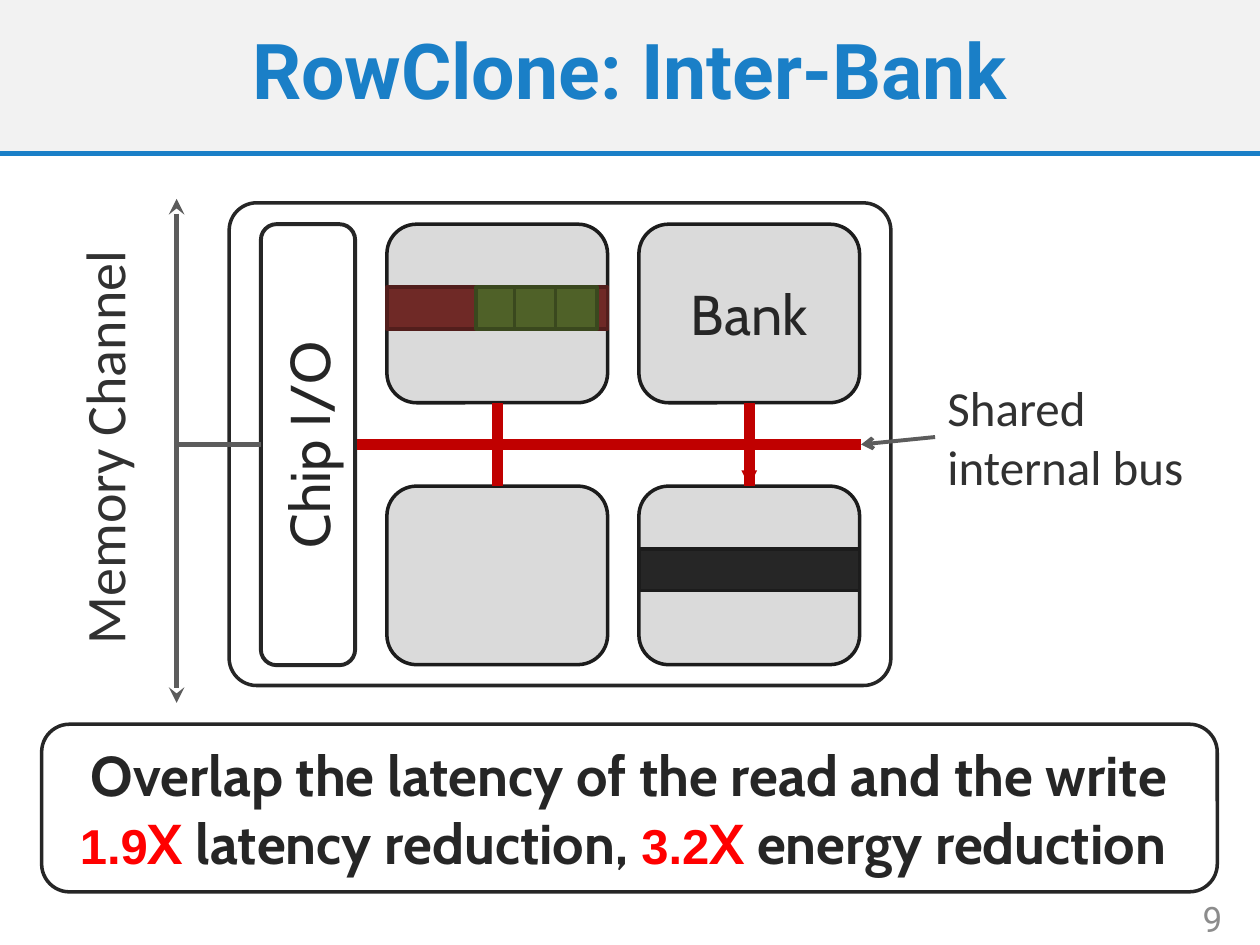
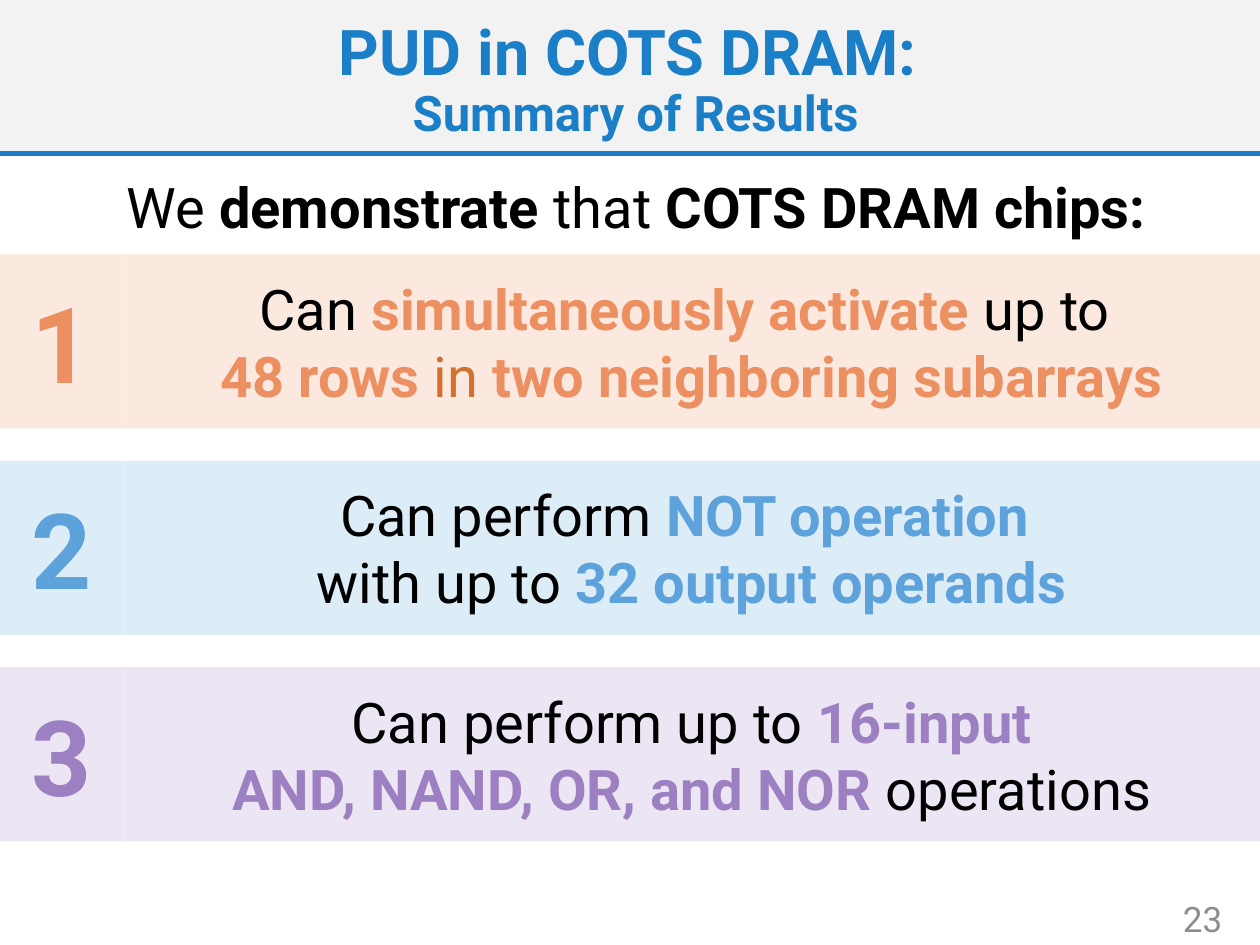
from lxml.etree import SubElement
from pptx import Presentation
from pptx.dml.color import RGBColor
from pptx.enum.shapes import MSO_CONNECTOR, MSO_SHAPE
from pptx.enum.text import MSO_ANCHOR, PP_ALIGN
from pptx.oxml.ns import qn
from pptx.util import Cm, Pt

WIDTH, HEIGHT = 25.4, 19.05
BLUE, PALE_GREY, NUMBER_GREY = "1A7FC7", "F2F2F2", "8C8C8C"
INK, OUTLINE, LABEL, WIRE = "262626", "1C1C1C", "313131", "5C5C5C"
BANK_FILL, BUS_RED, BRIGHT_RED = "DADADA", "C00000", "FF0000"
ORANGE, DARK_ORANGE, SKY, PURPLE = "EC8F61", "D56F30", "5DA2DB", "9C80C2"
BANK_WIDTH, BANK_HEIGHT, ROW_HEIGHT = 4.45, 3.6, 0.84


def color(value):
    """Turn a hex string into a colour."""
    return RGBColor.from_string(value)


def style_font(font, size=None, name=None, ink=None, bold=None):
    """Set the given properties of a font."""
    if size:
        font.size = Pt(size)
    if name:
        font.name = name
    if ink:
        font.color.rgb = color(ink)
    if bold is not None:
        font.bold = bold


def write(shape, paragraphs, size, name="Roboto", ink="000000", bold=False,
          align=PP_ALIGN.CENTER, anchor=MSO_ANCHOR.MIDDLE, spacing=None, wrap=True):
    """Fill a shape with paragraphs, each a list of (text, font changes)."""
    frame = shape.text_frame
    frame.word_wrap = wrap
    frame.vertical_anchor = anchor
    for index, pieces in enumerate(paragraphs):
        paragraph = frame.paragraphs[0] if index == 0 else frame.add_paragraph()
        paragraph.alignment = align
        if spacing:
            paragraph.line_spacing = spacing
        style_font(paragraph.font, size, name, ink, bold)
        for text, changes in pieces:
            run = paragraph.add_run()
            run.text = text
            style_font(run.font, **changes)


def plain(text):
    """Make one paragraph without font changes."""
    return [(text, {})]


def add_text(slide, box, paragraphs, size, **options):
    """Add a text box at a box given in centimetres."""
    shape = slide.shapes.add_textbox(*map(Cm, box))
    write(shape, paragraphs, size, **options)
    return shape


def add_box(slide, kind, box, fill, line=None, line_width=2, radius=None):
    """Add a filled preset shape at a box given in centimetres."""
    shape = slide.shapes.add_shape(kind, *map(Cm, box))
    shape.shadow.inherit = False
    shape.fill.solid()
    shape.fill.fore_color.rgb = color(fill)
    if line:
        shape.line.color.rgb = color(line)
        shape.line.width = Pt(line_width)
    else:
        shape.line.fill.background()
    if radius:
        shape.adjustments[0] = radius
    return shape


def add_line(slide, start, end, ink, width, head=None, tail=None,
             kind=MSO_CONNECTOR.STRAIGHT):
    """Add a connector between two points, with optional arrowheads."""
    connector = slide.shapes.add_connector(kind, *map(Cm, (*start, *end)))
    connector.line.color.rgb = color(ink)
    connector.line.width = Pt(width)
    properties = connector._element.spPr
    outline = properties.find(qn("a:ln"))
    for tag, arrow in (("a:headEnd", head), ("a:tailEnd", tail)):
        if arrow:
            SubElement(outline, qn(tag)).set("type", arrow)
    SubElement(properties, qn("a:effectLst"))
    return connector


def add_frame(presentation, number):
    """Add a slide with the title band, its rule and the page number."""
    slide = presentation.slides.add_slide(presentation.slide_layouts[6])
    add_box(slide, MSO_SHAPE.RECTANGLE, (0, -0.03, WIDTH, 3.15), PALE_GREY)
    add_text(slide, (22.15, 18.01, 2.74, 1.02), [plain(str(number))], 20,
             ink=NUMBER_GREY, align=PP_ALIGN.RIGHT)
    add_line(slide, (0, 3.1), (WIDTH, 3.1), BLUE, 3)
    return slide


def add_title(slide, box, paragraphs, size):
    """Add the bold blue title."""
    add_text(slide, box, paragraphs, size, ink=BLUE, bold=True, spacing=0.9)


def add_memory_channel(slide, left, top, height, label_width):
    """Draw the vertical channel arrow and the rotated label beside it."""
    add_line(slide, (left, top), (left, top + height), WIRE, 3, "stealth", "stealth")
    label_height = 1.63
    center_x, center_y = left - 1.47, top + height / 2 - 0.07
    label = add_text(slide, (center_x - label_width / 2, center_y - label_height / 2,
                             label_width, label_height),
                     [plain("Memory Channel")], 32, name="Calibri", ink=LABEL,
                     anchor=MSO_ANCHOR.TOP, wrap=False)
    label.rotation = 270


def add_bank(slide, left, top):
    """Draw one memory bank."""
    return add_box(slide, MSO_SHAPE.ROUNDED_RECTANGLE,
                   (left, top, BANK_WIDTH, BANK_HEIGHT), BANK_FILL, OUTLINE)


def add_row(slide, left, top, fill, line, width=BANK_WIDTH):
    """Draw a row, or a cell of one, inside a bank."""
    add_box(slide, MSO_SHAPE.RECTANGLE, (left, top + 1.27, width, ROW_HEIGHT), fill, line)


def add_copy_path(slide, start, end):
    """Draw the elbow arrow that leaves downwards and arrives downwards."""
    center_x, center_y = (start[0] + end[0]) / 2, (start[1] + end[1]) / 2
    across, down = (end[0] - start[0]) / 2, (end[1] - start[1]) / 2
    elbow = add_line(slide, (center_x + down, center_y - across),
                     (center_x - down, center_y + across), BUS_RED, 3,
                     tail="triangle", kind=MSO_CONNECTOR.ELBOW)
    elbow._element.spPr.xfrm.set("rot", str(270 * 60000))


def add_chip(slide, left, top, width, height, channel_x):
    """Draw the chip with its interface, banks, internal bus and copied row."""
    add_box(slide, MSO_SHAPE.ROUNDED_RECTANGLE, (left, top, width, height),
            "FFFFFF", INK, radius=0.057)
    interface_left, interface_width = left + 0.64, 1.9
    interface = add_box(slide, MSO_SHAPE.ROUNDED_RECTANGLE,
                        (interface_left, top + 0.43, interface_width, 8.89),
                        "FFFFFF", INK, 2.25)
    write(interface, [plain("Chip I/O")], 32, name="Cabin", ink=INK)
    interface.text_frame._txBody.bodyPr.set("vert", "vert270")

    columns = [left + 3.18 + 5.08 * index for index in range(2)]
    rows = [top + 0.43 + 5.28 * index for index in range(2)]
    banks = [[add_bank(slide, x, y) for x in columns] for y in rows]
    write(banks[0][1], [plain("Bank")], 32, name="Cabin", ink=INK)

    gap_top, gap_bottom = rows[0] + BANK_HEIGHT, rows[1]
    bus_y = (gap_top + gap_bottom) / 2
    bus_left, bus_right = interface_left + interface_width + 0.03, columns[1] + BANK_WIDTH + 0.03
    add_line(slide, (interface_left, bus_y), (channel_x, bus_y), WIRE, 3)
    add_line(slide, (bus_right, bus_y), (bus_left, bus_y), BUS_RED, 6)
    middles = [x + BANK_WIDTH / 2 for x in columns]
    for middle in middles:
        add_line(slide, (middle, gap_top), (middle, gap_bottom), BUS_RED, 6)
    add_copy_path(slide, (middles[0], gap_top), (middles[1], gap_bottom))

    add_row(slide, columns[0], rows[0], "6F2926", "521E1C")
    add_row(slide, columns[1], rows[1], INK, OUTLINE)
    for offset in (1.8, 2.57, 3.4):
        add_row(slide, columns[0] + offset, rows[0], "4F6128", "3A481E", ROW_HEIGHT)
    return bus_right, bus_y


def add_bus_label(slide, left, top, bus_end):
    """Name the internal bus and point to its end."""
    add_text(slide, (left, top, 5.72, 2.64), [plain("Shared internal bus")], 28,
             name="Calibri", ink=LABEL, align=PP_ALIGN.LEFT, anchor=MSO_ANCHOR.TOP)
    add_line(slide, (left, top + 1.32), bus_end, WIRE, 2.25, tail="arrow")


def add_conclusion(slide, box):
    """Add the outlined box with the measured gains."""
    figure = {"size": 28, "name": "Arial", "ink": BRIGHT_RED}
    times = {"ink": BRIGHT_RED}
    shape = add_box(slide, MSO_SHAPE.ROUNDED_RECTANGLE, box, "FFFFFF", INK)
    write(shape, [
        plain("Overlap the latency of the read and the write"),
        [("1.9", figure), ("X", times), (" latency reduction, ", {}),
         ("3.2", figure), ("X", times), (" energy reduction ", {})],
    ], 32, name="Cabin", ink=INK, bold=True)


def add_result(slide, top, number, fill, accent, paragraphs):
    """Add a full-width band with a large number and its finding."""
    number_width, height = 2.49, 3.51
    finding = add_box(slide, MSO_SHAPE.RECTANGLE,
                      (number_width, top, WIDTH - number_width, height), fill)
    write(finding, paragraphs, 32)
    badge = add_box(slide, MSO_SHAPE.RECTANGLE, (0, top, number_width, height), fill)
    write(badge, [plain(str(number))], 60, ink=accent, bold=True)


def build_inter_bank(presentation):
    """Build the slide on copying between banks."""
    slide = add_frame(presentation, 9)
    add_title(slide, (0, -0.03, WIDTH, 3.07), [plain("RowClone: Inter-Bank")], 44)
    channel_x = 3.56
    add_memory_channel(slide, channel_x, 4.01, 10.16, 8.53)
    bus_end = add_chip(slide, 4.62, 4.09, 13.34, 9.73, channel_x)
    add_bus_label(slide, 18.85, 7.49, bus_end)
    add_conclusion(slide, (0.84, 14.6, 23.7, 3.38))


def build_results(presentation):
    """Build the slide that sums up the results."""
    slide = add_frame(presentation, 23)
    strong = {"bold": True}
    orange, sky, purple = ({"ink": ink, "bold": True} for ink in (ORANGE, SKY, PURPLE))
    add_text(slide, (0.13, 2.95, WIDTH, 2.59), [[
        ("We ", {}), ("demonstrate ", strong), ("that", {}), (" COTS DRAM chips:", strong),
    ]], 32, spacing=0.9)
    results = [
        ("FBE9DF", ORANGE, [
            [("Can ", {}), ("simultaneously activate ", orange), ("up to ", {})],
            [("48 rows ", orange), ("in ", {"ink": DARK_ORANGE}),
             ("two neighboring subarrays", orange)]]),
        ("DDEDF8", SKY, [
            [("Can perform ", {}), ("NOT operation ", sky)],
            [("with up to ", {}), ("32 output operands", sky)]]),
        ("ECE5F3", PURPLE, [
            [("Can perform up to ", {}), ("16-input", purple)],
            [("AND, NAND, OR, and NOR ", purple), ("operations", {})]]),
    ]
    for index, (fill, accent, paragraphs) in enumerate(results):
        add_result(slide, 5.13 + 4.16 * index, index + 1, fill, accent, paragraphs)
    add_title(slide, (0.46, 0.36, 24.71, 2.57),
              [plain("PUD in COTS DRAM: "), [("Summary of Results", {"size": 28})]], 36)


def main():
    """Build and save the presentation."""
    presentation = Presentation()
    presentation.slide_width, presentation.slide_height = Cm(WIDTH), Cm(HEIGHT)
    build_inter_bank(presentation)
    build_results(presentation)
    presentation.save("out.pptx")


if __name__ == "__main__":
    main()
